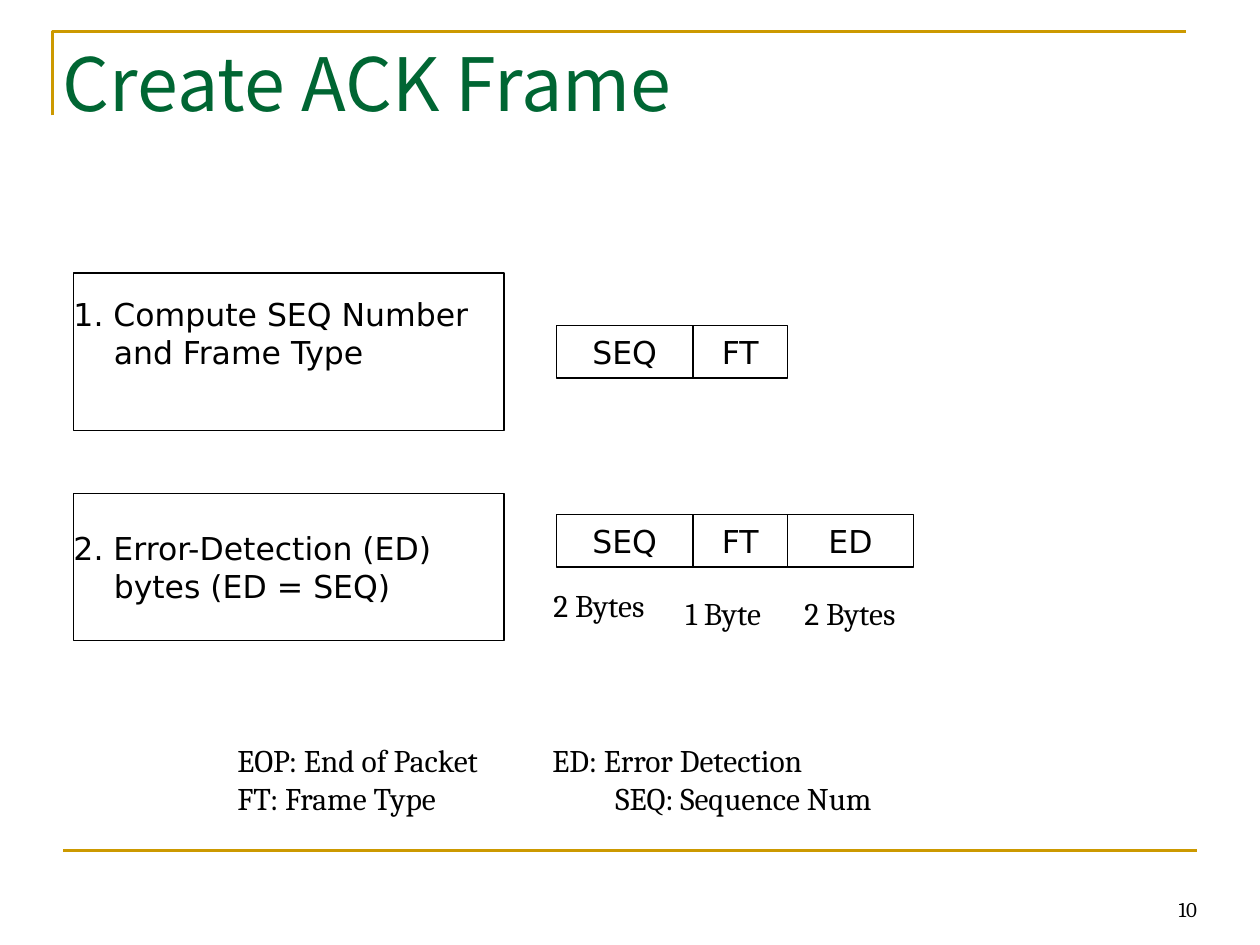
from dataclasses import dataclass

from lxml import etree
from pptx import Presentation
from pptx import util as u
from pptx.dml.color import RGBColor
from pptx.enum import shapes, text
from pptx.oxml.ns import qn

# The slide is a grid of 120 columns by 90 rows, 12 to the inch
CELL = u.Inches(1) // 12
COLUMNS, ROWS = 120, 90


@dataclass(frozen=True)
class Theme:
    ink: RGBColor = RGBColor(0, 0, 0)
    title: RGBColor = RGBColor(0x00, 0x66, 0x33)
    rule: RGBColor = RGBColor(0xCC, 0x99, 0x00)
    title_font: str = "Noto Sans CJK KR"
    box_font: str = "DejaVu Sans"
    note_font: str = "Cambria"
    title_size: int = 42
    body_size: int = 18
    number_size: int = 12
    rule_width: float = 1.5
    box_width: float = 0.75


@dataclass(frozen=True)
class Area:
    column: float
    row: float
    columns: float
    rows: float

    def lengths(self) -> list[int]:
        return [round(CELL * n) for n in (self.column, self.row, self.columns, self.rows)]


@dataclass(frozen=True)
class Step:
    area: Area
    lines: tuple[str, ...]
    space_below: float = 0


@dataclass(frozen=True)
class Field:
    name: str
    column: float
    columns: float


@dataclass(frozen=True)
class Note:
    words: str
    area: Area


THEME = Theme()
STEPS = (
    Step(Area(7, 26, 41, 15), ("1. Compute SEQ Number", "and Frame Type"), 0.3),
    Step(Area(7, 47, 41, 14), ("2. Error-Detection (ED)", "bytes (ED = SEQ)")),
)
SEQ, FT, ED = Field("SEQ", 53, 13), Field("FT", 66, 9), Field("ED", 75, 12)
FRAMES = {31: (SEQ, FT), 49: (SEQ, FT, ED)}
FIELD_ROWS = 5
SIZES = (
    Note("2 Bytes", Area(52.1, 55.2, 10.5, 5)),
    Note("1 Byte", Area(64.7, 56, 9.3, 5)),
    Note("2 Bytes", Area(76, 56, 10.5, 5)),
)
LEGEND = {
    "EOP: End of Packet\tED: Error Detection": 2.5,
    "FT: Frame Type\tSEQ: Sequence Num": 3,
}
HANGING = u.Inches(0.32)


def apply(target, values: dict) -> None:
    for name, value in values.items():
        setattr(target, name, value)


def write(shape, lines, font: str, size: int, color=THEME.ink, inset: float = 0,
          align=text.PP_ALIGN.LEFT, **frame_values) -> list:
    """Fill a shape with one paragraph for each line."""
    frame = shape.text_frame
    margins = {f"margin_{side}": u.Inches(inset) for side in ("left", "top", "right", "bottom")}
    apply(frame, {"word_wrap": True, **margins, **frame_values})
    frame.text = "\n".join(lines)
    for paragraph in frame.paragraphs:
        paragraph.alignment = align
        apply(paragraph.font, {"name": font, "size": u.Pt(size)})
        paragraph.font.color.rgb = color
    return list(frame.paragraphs)


def add_box(slide, area: Area):
    box = slide.shapes.add_shape(shapes.MSO_SHAPE.RECTANGLE, *area.lengths())
    box.shadow.inherit = False
    box.fill.background()
    box.line.color.rgb = THEME.ink
    box.line.width = u.Pt(THEME.box_width)
    return box


def add_step(slide, step: Step) -> None:
    paragraphs = write(add_box(slide, step.area), step.lines, THEME.box_font, THEME.body_size,
                       vertical_anchor=text.MSO_ANCHOR.MIDDLE,
                       margin_bottom=u.Inches(step.space_below))
    for paragraph in paragraphs[1:]:
        paragraph._p.get_or_add_pPr().set("marL", str(HANGING))


def add_field(slide, field: Field, row: float) -> None:
    box = add_box(slide, Area(field.column, row, field.columns, FIELD_ROWS))
    write(box, [field.name], THEME.box_font, THEME.body_size,
          align=text.PP_ALIGN.CENTER, vertical_anchor=text.MSO_ANCHOR.MIDDLE)


def add_note(slide, note: Note) -> None:
    write(slide.shapes.add_textbox(*note.area.lengths()), [note.words],
          THEME.note_font, THEME.body_size, inset=0.05, word_wrap=False)


def add_legend(slide, area: Area) -> None:
    paragraphs = write(slide.shapes.add_textbox(*area.lengths()), LEGEND,
                       THEME.note_font, THEME.body_size, inset=0.05)
    for paragraph, stop in zip(paragraphs, LEGEND.values()):
        stops = etree.SubElement(paragraph._p.get_or_add_pPr(), qn("a:tabLst"))
        etree.SubElement(stops, qn("a:tab"), pos=str(u.Inches(stop)), algn="l")


def style_rule(rule) -> None:
    rule.line.color.rgb = THEME.rule
    rule.line.width = u.Pt(THEME.rule_width)


def add_rules(slide) -> None:
    # Corner at the top left
    builder = slide.shapes.build_freeform(5 * CELL, 11 * CELL)
    builder.add_line_segments([(5 * CELL, 3 * CELL), (113 * CELL, 3 * CELL)], close=False)
    corner = builder.convert_to_shape()
    corner.shadow.inherit = False
    corner.fill.background()
    style_rule(corner)
    # Line above the footer
    footer = slide.shapes.add_connector(
        shapes.MSO_CONNECTOR.STRAIGHT, 6 * CELL, 81 * CELL, 114 * CELL, 81 * CELL)
    etree.SubElement(footer._element.spPr, qn("a:effectLst"))
    style_rule(footer)


def main() -> None:
    presentation = Presentation()
    apply(presentation, {"slide_width": COLUMNS * CELL, "slide_height": ROWS * CELL})
    slide = presentation.slides.add_slide(presentation.slide_layouts[6])

    # Frame, title and page number
    add_rules(slide)
    write(slide.shapes.add_textbox(*Area(6, 3.6, 108, 15).lengths()), ["Create ACK Frame"],
          THEME.title_font, THEME.title_size, THEME.title)
    write(slide.shapes.add_textbox(*Area(86, 85.5, 28, 2.3).lengths()), ["10"],
          THEME.note_font, THEME.number_size, align=text.PP_ALIGN.RIGHT,
          vertical_anchor=text.MSO_ANCHOR.BOTTOM)

    # Steps and the frame after each one
    for step in STEPS:
        add_step(slide, step)
    for row, fields in FRAMES.items():
        for field in fields:
            add_field(slide, field, row)

    # Field sizes and abbreviations
    for note in SIZES:
        add_note(slide, note)
    add_legend(slide, Area(22, 70, 63, 8.9))

    presentation.save("out.pptx")


if __name__ == "__main__":
    main()
